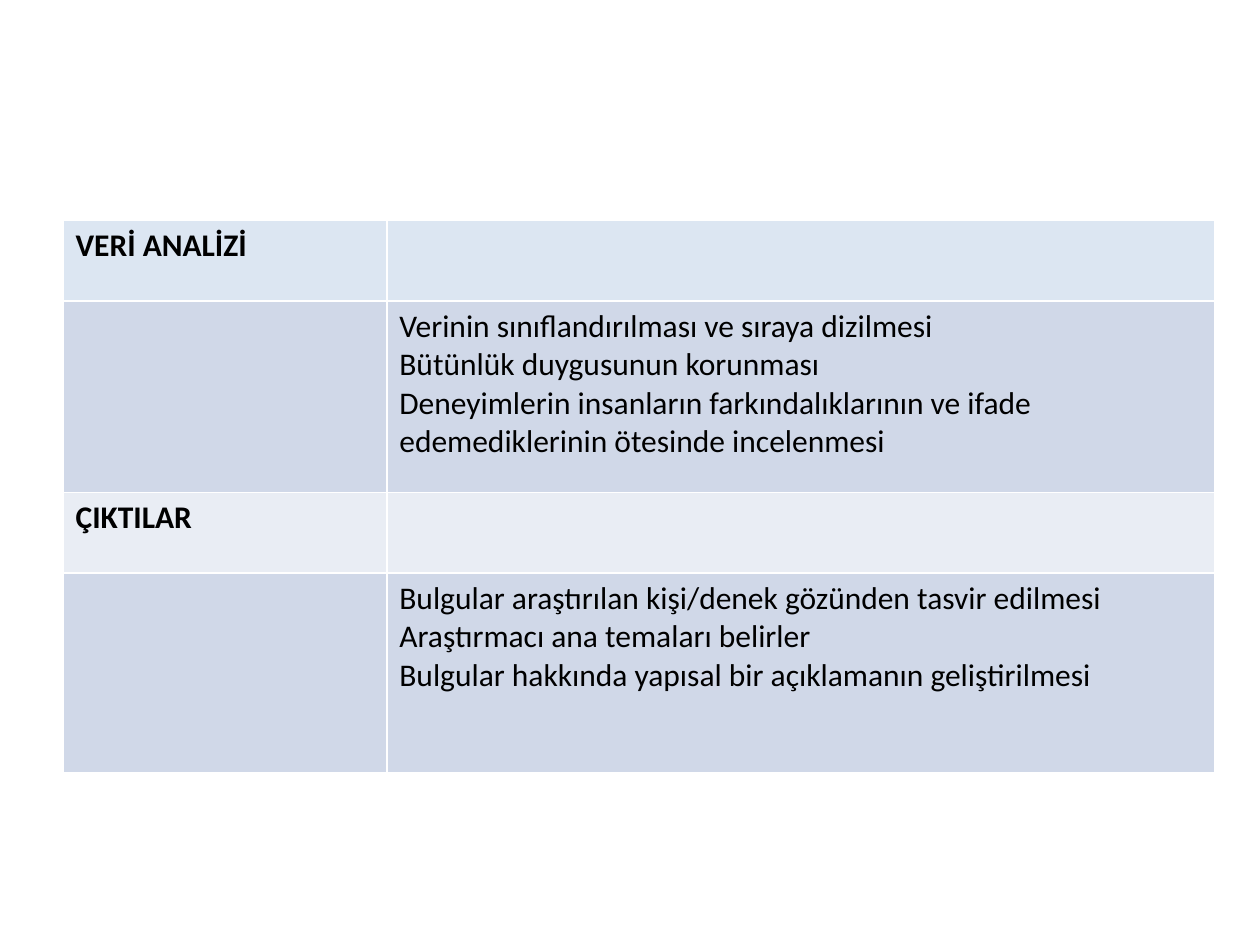
"""Build a slide with a table on data analysis and outputs."""
from pptx import Presentation
from pptx.dml.color import RGBColor
from pptx.util import Inches, Pt

BLACK = RGBColor(0x00, 0x00, 0x00)
HEADER_BLUE = RGBColor(0xDC, 0xE6, 0xF2)
DETAIL_BLUE = RGBColor(0xD0, 0xD8, 0xE8)
SECTION_BLUE = RGBColor(0xE9, 0xED, 0xF4)

COLUMN_WIDTHS = [2.57, 6.57]
ROWS = [
    (0.64, HEADER_BLUE, "VERİ ANALİZİ", []),
    (1.52, DETAIL_BLUE, "", [
        "Verinin sınıflandırılması ve sıraya dizilmesi",
        "Bütünlük duygusunun korunması",
        "Deneyimlerin insanların farkındalıklarının ve ifade edemediklerinin ötesinde incelenmesi",
    ]),
    (0.64, SECTION_BLUE, "ÇIKTILAR", []),
    (1.58, DETAIL_BLUE, "", [
        "Bulgular araştırılan kişi/denek gözünden tasvir edilmesi",
        "Araştırmacı ana temaları belirler",
        "Bulgular hakkında yapısal bir açıklamanın geliştirilmesi",
    ]),
]


def write_text(frame, lines, size=18, bold=False, color=BLACK, font="Calibri"):
    for index, line in enumerate(lines):
        para = frame.add_paragraph() if index else frame.paragraphs[0]
        span = para.add_run()
        span.text = line
        span.font.name = font
        span.font.size = Pt(size)
        span.font.bold = bold
        span.font.color.rgb = color


deck = Presentation()
deck.slide_width = Inches(10)
deck.slide_height = Inches(7.5)
page = deck.slides.add_slide(deck.slide_layouts[6])

table = page.shapes.add_table(
    len(ROWS), len(COLUMN_WIDTHS), Inches(0.5), Inches(1.75),
    Inches(sum(COLUMN_WIDTHS)), Inches(sum(row[0] for row in ROWS)),
).table

for column, width in zip(table.columns, COLUMN_WIDTHS):
    column.width = Inches(width)

for row, (height, fill, heading, details) in zip(table.rows, ROWS):
    row.height = Inches(height)
    for cell in row.cells:
        cell.fill.solid()
        cell.fill.fore_color.rgb = fill
    heading_cell, detail_cell = row.cells
    if heading:
        write_text(heading_cell.text_frame, [heading], bold=True)
    write_text(detail_cell.text_frame, details)

deck.save("out.pptx")
